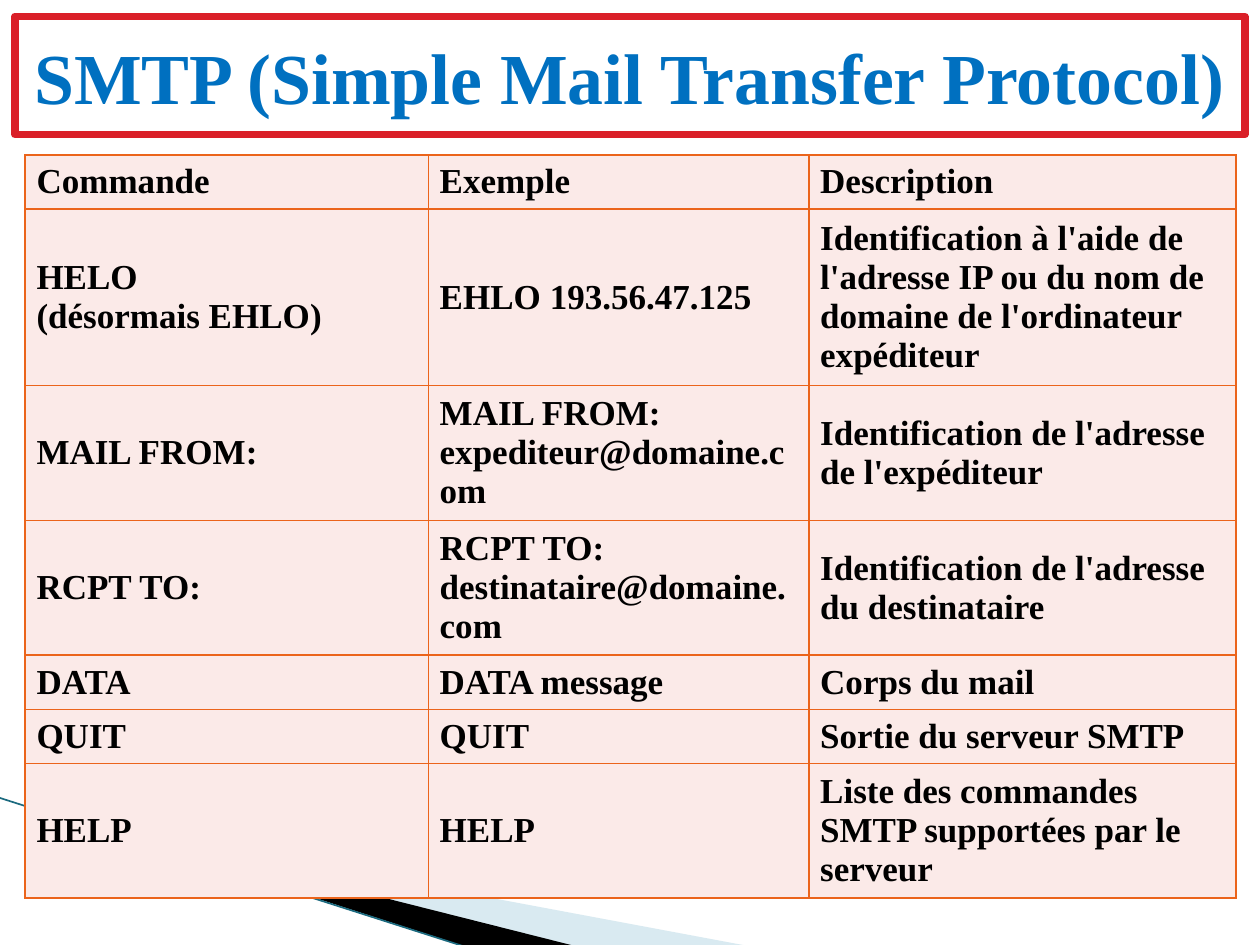
import pptx
import pptx.dml.color
import pptx.enum.shapes
import pptx.enum.text
import pptx.oxml
import pptx.oxml.ns
import pptx.util

WIDTH, HEIGHT = 10, 7.5
FONT = "Times New Roman"
COLUMNS = [3.2, 3.02, 3.39]
ROWS = [0.43, 1.4, 1.07, 1.07, 0.43, 0.43, 1.07]
COMMANDS = [
    ["Commande", "Exemple", "Description"],
    ["HELO\v(désormais EHLO)", "EHLO 193.56.47.125",
     "Identification à l'aide de l'adresse IP ou du nom de domaine de l'ordinateur expéditeur"],
    ["MAIL FROM:", "MAIL FROM: expediteur@domaine.com",
     "Identification de l'adresse de l'expéditeur"],
    ["RCPT TO:", "RCPT TO: destinataire@domaine.com",
     "Identification de l'adresse du destinataire"],
    ["DATA", "DATA message", "Corps du mail"],
    ["QUIT", "QUIT", "Sortie du serveur SMTP"],
    ["HELP", "HELP", "Liste des commandes SMTP supportées par le serveur"],
]


def inches(*lengths):
    return [pptx.util.Inches(length) for length in lengths]


def paint(color_format, value):
    color_format.rgb = pptx.dml.color.RGBColor.from_string(value)


def fill(target, value):
    target.fill.solid()
    paint(target.fill.fore_color, value)


def style_text(text_frame, size, color):
    text_frame.word_wrap = True
    for paragraph in text_frame.paragraphs:
        paragraph.font.name = FONT
        paragraph.font.size = pptx.util.Pt(size)
        paragraph.font.bold = True
        paint(paragraph.font.color, color)


def add_wedge(slide, points, color, opacity=100):
    start, *others = [inches(*point) for point in points]
    builder = slide.shapes.build_freeform(*start)
    builder.add_line_segments(others, close=True)
    shape = builder.convert_to_shape()
    shape.shadow.inherit = False
    shape.line.fill.background()
    fill(shape, color)
    if opacity < 100:
        color_element = shape._element.spPr.find(".//" + pptx.oxml.ns.qn("a:srgbClr"))
        alpha = color_element.makeelement(pptx.oxml.ns.qn("a:alpha"), {"val": str(opacity * 1000)})
        color_element.append(alpha)


def add_edge(slide, start, end, color, width):
    connector = slide.shapes.add_connector(
        pptx.enum.shapes.MSO_CONNECTOR.STRAIGHT, *inches(*start, *end))
    paint(connector.line.color, color)
    connector.line.width = pptx.util.Pt(width)
    properties = connector._element.spPr
    properties.append(properties.makeelement(pptx.oxml.ns.qn("a:effectLst"), {}))


def add_title(slide, text):
    margin = 0.012 * WIDTH
    shape = slide.shapes.add_shape(
        pptx.enum.shapes.MSO_SHAPE.RECTANGLE,
        *inches(margin, 0.13, WIDTH - 2 * margin, HEIGHT / 8))
    shape.shadow.inherit = False
    fill(shape, "FFFFFF")
    paint(shape.line.color, "DA1F28")
    shape.line.width = pptx.util.Pt(4.33)
    frame = shape.text_frame
    frame.text = text
    frame.margin_left, frame.margin_right = inches(0.09, 0.09)
    frame.vertical_anchor = pptx.enum.text.MSO_ANCHOR.MIDDLE
    frame.paragraphs[0].alignment = pptx.enum.text.PP_ALIGN.CENTER
    style_text(frame, 41, "0070C0")


def add_borders(cell, color, width):
    properties = cell._tc.get_or_add_tcPr()
    for index, side in enumerate(["lnL", "lnR", "lnT", "lnB"]):
        properties.insert(index, pptx.oxml.parse_xml(
            f'<a:{side} {pptx.oxml.ns.nsdecls("a")} w="{pptx.util.Pt(width)}">'
            f'<a:solidFill><a:srgbClr val="{color}"/></a:solidFill></a:{side}>'))


def add_command_table(slide):
    table = slide.shapes.add_table(
        len(ROWS), len(COLUMNS), *inches(0.2, 1.23, sum(COLUMNS), sum(ROWS))).table
    for column, width in zip(table.columns, COLUMNS):
        column.width = pptx.util.Inches(width)
    for row, height, texts in zip(table.rows, ROWS, COMMANDS):
        row.height = pptx.util.Inches(height)
        for cell, text in zip(row.cells, texts):
            cell.text = text
            cell.margin_left, cell.margin_right = inches(0.09, 0.09)
            cell.margin_top, cell.margin_bottom = inches(0.04, 0.04)
            cell.vertical_anchor = pptx.enum.text.MSO_ANCHOR.MIDDLE
            fill(cell, "FBEAE8")
            add_borders(cell, "EB641B", 1)
            style_text(cell.text_frame, 20, "000000")


def main():
    presentation = pptx.Presentation()
    presentation.slide_width, presentation.slide_height = inches(WIDTH, HEIGHT)
    slide = presentation.slides.add_slide(presentation.slide_layouts[6])
    add_wedge(slide, [(0.55, 6.5), (5.95, 7.51), (4.56, 7.51)], "A0CBDC", 40)
    add_wedge(slide, [(0.53, 6.49), (4.57, 7.51), (3.72, 7.52)], "000000")
    add_edge(slide, (-0.01, 6.33), (3.71, 7.52), "1B6A7F", 0.95)
    add_title(slide, "SMTP (Simple Mail Transfer Protocol)")
    add_command_table(slide)
    presentation.save("out.pptx")


if __name__ == "__main__":
    main()
